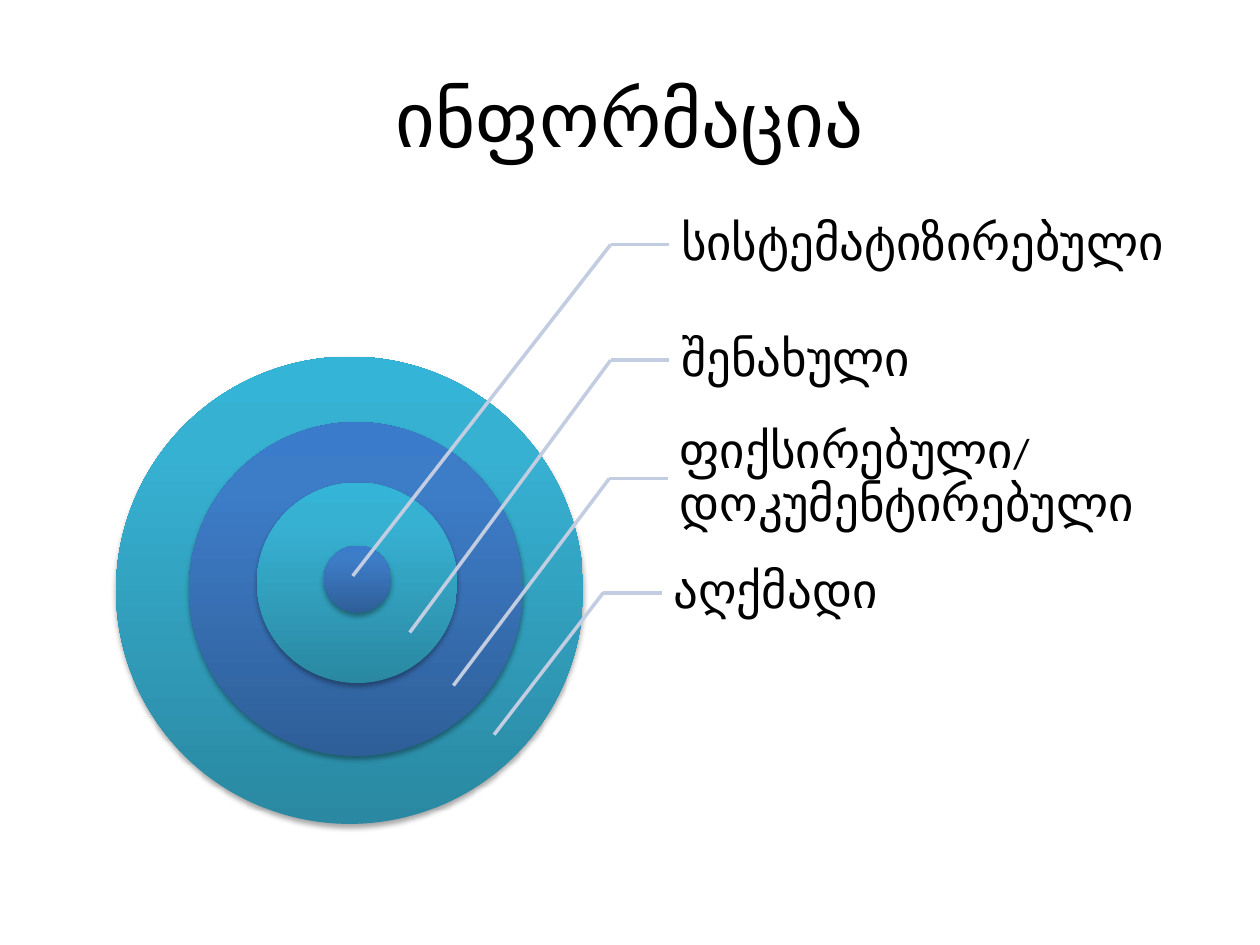
from copy import deepcopy
from dataclasses import dataclass

from lxml.etree import SubElement
from pptx import Presentation
from pptx.dml.color import RGBColor
from pptx.enum.shapes import MSO_CONNECTOR, MSO_SHAPE
from pptx.enum.text import MSO_ANCHOR, PP_ALIGN
from pptx.oxml.ns import qn
from pptx.util import Cm, Pt

FONT = "Calibri"
COLORS = {"text": "000000", "leader": "C2CDE1", "shadow": "000000"}
GRADIENTS = {
    "teal": ((0, "2A88A2"), (0.8, "37B1D2"), (1, "34B4D6")),
    "blue": ((0, "2F5F99"), (0.8, "3D7CC7"), (1, "3A7CCB")),
}
LABEL_HEIGHT = 2.26
LEADER_LENGTH = 1.18


@dataclass
class Level:
    gradient: str
    circle: tuple
    label: tuple
    target: tuple
    runs: tuple


LEVELS = (
    Level("teal", (2.34, 7.19, 9.42), (13.34, 11.95, 6.99), (9.96, 14.81),
          (("აღქმადი", 28),)),
    Level("blue", (3.81, 8.51, 6.73), (13.46, 9.65, 10.67), (9.14, 13.82),
          (("ფიქსირებული", 28), ("/ ", 24), ("დოკუმენტირებული", 28))),
    Level("teal", (5.18, 9.73, 4.04), (13.49, 7.26, 6.83), (8.26, 12.75),
          (("შენახული", 28),)),
    Level("blue", (6.53, 11, 1.35), (13.49, 4.93, 10.44), (7.11, 11.61),
          (("სისტემატიზირებული", 28),)),
)


def add_run(paragraph, text, size):
    run = paragraph.add_run()
    run.text = text
    run.font.name = FONT
    run.font.size = Pt(size)
    run.font.color.rgb = RGBColor.from_string(COLORS["text"])


def set_title(slide, text):
    title = slide.shapes.title
    title.left, title.top, title.width, title.height = Cm(1.27), Cm(0.76), Cm(22.86), Cm(3.18)
    title.text_frame.vertical_anchor = MSO_ANCHOR.MIDDLE
    paragraph = title.text_frame.paragraphs[0]
    paragraph.alignment = PP_ALIGN.CENTER
    add_run(paragraph, text, 44)


def fill_gradient(shape, stops):
    shape.fill.gradient()
    shape.fill.gradient_angle = 90
    stop_list = shape.element.spPr.find(".//" + qn("a:gsLst"))
    stop_list.append(deepcopy(stop_list[0]))
    for stop, (position, color) in zip(shape.fill.gradient_stops, stops):
        stop.position = position
        stop.color.rgb = RGBColor.from_string(color)


def add_shadow(shape):
    shape.shadow.inherit = False
    effects = shape.element.spPr.find(qn("a:effectLst"))
    shadow = SubElement(effects, qn("a:outerShdw"), blurRad=str(Pt(3.1)),
                        dist=str(Pt(1.8)), dir="5400000", rotWithShape="0")
    color = SubElement(shadow, qn("a:srgbClr"), val=COLORS["shadow"])
    SubElement(color, qn("a:alpha"), val="35000")


def add_circle(slide, left, top, diameter, stops):
    circle = slide.shapes.add_shape(
        MSO_SHAPE.OVAL, Cm(left), Cm(top), Cm(diameter), Cm(diameter))
    fill_gradient(circle, stops)
    circle.line.fill.background()
    add_shadow(circle)


def add_label(slide, left, middle, width, runs):
    label = slide.shapes.add_textbox(
        Cm(left), Cm(middle - LABEL_HEIGHT / 2), Cm(width), Cm(LABEL_HEIGHT))
    frame = label.text_frame
    frame.word_wrap = True
    frame.vertical_anchor = MSO_ANCHOR.MIDDLE
    frame.margin_left = Cm(0.24)
    frame.margin_top = frame.margin_right = frame.margin_bottom = Cm(0.05)
    paragraph = frame.paragraphs[0]
    paragraph.line_spacing = 0.9
    for text, size in runs:
        add_run(paragraph, text, size)


def add_line(slide, start, end):
    line = slide.shapes.add_connector(
        MSO_CONNECTOR.STRAIGHT, *(Cm(value) for value in start + end))
    line.line.color.rgb = RGBColor.from_string(COLORS["leader"])
    line.line.width = Pt(2)
    SubElement(line.element.spPr, qn("a:effectLst"))


def add_level(slide, level):
    left, middle, width = level.label
    elbow = (left - LEADER_LENGTH, middle)
    add_circle(slide, *level.circle, GRADIENTS[level.gradient])
    add_label(slide, left, middle, width, level.runs)
    add_line(slide, elbow, (left, middle))
    add_line(slide, elbow, level.target)


def main():
    presentation = Presentation()
    presentation.slide_width, presentation.slide_height = Cm(25.4), Cm(19.05)
    slide = presentation.slides.add_slide(presentation.slide_layouts[5])
    set_title(slide, "ინფორმაცია")
    for level in LEVELS:
        add_level(slide, level)
    presentation.save("out.pptx")


if __name__ == "__main__":
    main()
